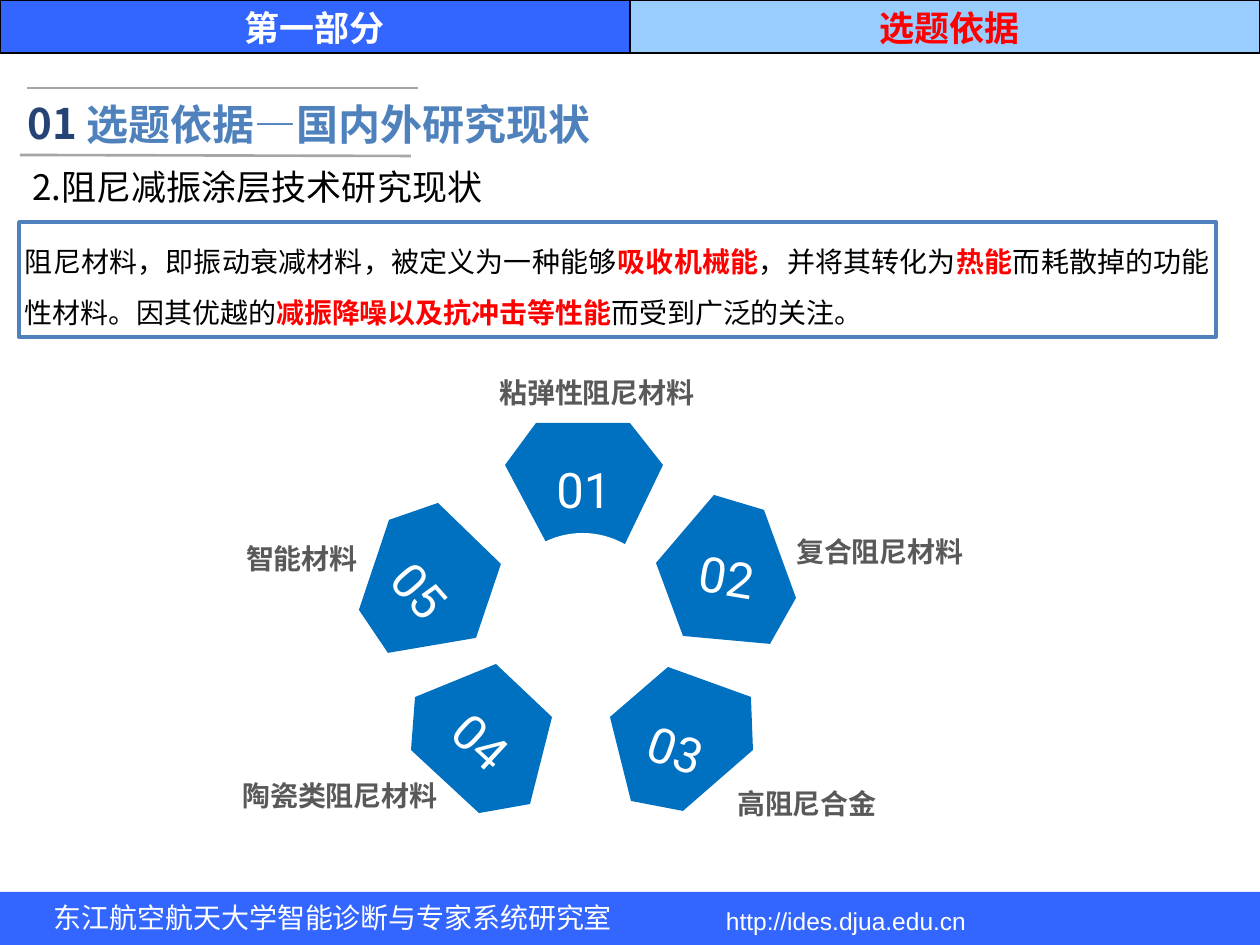
import math

from pptx import Presentation
from pptx import util as u
from pptx.dml.color import RGBColor
from pptx.enum import shapes, text
from pptx.oxml.ns import qn
from lxml import etree

PX = 914400 / 126  # EMU per px
WHITE = RGBColor(0xFF, 0xFF, 0xFF)
BLACK = RGBColor(0, 0, 0)
RED = RGBColor(0xFF, 0, 0)
ROYAL = RGBColor(0x33, 0x66, 0xFF)
SKY = RGBColor(0x99, 0xCC, 0xFF)
NAVY = RGBColor(0x25, 0x43, 0x75)
STEEL = RGBColor(0x4F, 0x81, 0xBD)
PETAL = RGBColor(0x00, 0x70, 0xC0)
GREY = RGBColor(0xA6, 0xA6, 0xA6)
DARK_GREY = RGBColor(0x59, 0x59, 0x59)
CJK = "Noto Sans CJK SC"
LEFT, CENTER = text.PP_ALIGN.LEFT, text.PP_ALIGN.CENTER
TOP, MIDDLE = text.MSO_ANCHOR.TOP, text.MSO_ANCHOR.MIDDLE


def emu(px):
    return u.Emu(round(px * PX))


def turn(point, degrees):
    x, y = point
    c, s = math.cos(math.radians(degrees)), math.sin(math.radians(degrees))
    return x * c - y * s, x * s + y * c


class Deck:
    def __init__(self, width, height):
        self.prs = Presentation()
        self.prs.slide_width, self.prs.slide_height = emu(width), emu(height)
        self.slide = self.prs.slides.add_slide(self.prs.slide_layouts[6])

    def paint(self, shape, fill=None, line=None, weight=1):
        shape.shadow.inherit = False
        if fill is None:
            shape.fill.background()
        else:
            shape.fill.solid()
            shape.fill.fore_color.rgb = fill
        if line is None:
            shape.line.fill.background()
        else:
            shape.line.color.rgb = line
            shape.line.width = u.Pt(weight)
        return shape

    def shape(self, kind, box, **look):
        added = self.slide.shapes.add_shape(kind, *map(emu, box))
        return self.paint(added, **look)

    def rect(self, box, **look):
        return self.shape(shapes.MSO_SHAPE.RECTANGLE, box, **look)

    def line(self, start, end):
        rule = self.slide.shapes.add_connector(
            shapes.MSO_CONNECTOR.STRAIGHT, *map(emu, start + end))
        rule.line.color.rgb = GREY
        rule.line.width = u.Pt(1.5)
        etree.SubElement(rule._element.spPr, qn("a:effectLst"))

    def polygon(self, points, rotation, **look):
        """Outline as seen on the slide, stored upright and then rotated."""
        upright = [turn(p, -rotation) for p in points]
        middle = [(min(axis) + max(axis)) / 2 for axis in zip(*upright)]
        seen = turn(middle, rotation)
        first, *rest = [(round((x - middle[0] + seen[0]) * PX),
                         round((y - middle[1] + seen[1]) * PX)) for x, y in upright]
        builder = self.slide.shapes.build_freeform(*first)
        builder.add_line_segments(rest, close=True)
        outline = self.paint(builder.convert_to_shape(), **look)
        outline.rotation = rotation
        return outline

    def add_text(self, shape, runs, size, font=CJK, align=LEFT, anchor=TOP,
                 spacing=None, inset=None):
        """Runs are (wording, colour, bold)."""
        frame = shape.text_frame
        frame.word_wrap = True
        frame.vertical_anchor = anchor
        if inset is not None:
            frame.margin_left = frame.margin_right = emu(inset)
            frame.margin_top = frame.margin_bottom = emu(inset)
        paragraph = frame.paragraphs[0]
        paragraph.alignment = align
        if spacing:
            paragraph.line_spacing = spacing
        for wording, colour, bold in runs:
            run = paragraph.add_run()
            run.text = wording
            run.font.size, run.font.name = u.Pt(size), font
            run.font.bold, run.font.color.rgb = bold, colour
            east_asian = etree.SubElement(run._r.get_or_add_rPr(), qn("a:ea"))
            east_asian.set("typeface", CJK)

    def label(self, box, wording, size, colour, bold=False, **style):
        added = self.slide.shapes.add_textbox(*map(emu, box))
        self.add_text(added, [(wording, colour, bold)], size, **style)


def main():
    deck = Deck(1260, 945)

    # Header and footer bands
    deck.rect((0, 0, 630, 53), fill=ROYAL, line=BLACK, weight=0.75)
    deck.rect((630, 0, 630, 53), fill=SKY, line=BLACK, weight=0.75)
    deck.rect((0, 892, 1260, 53), fill=ROYAL)
    deck.label((48, 895, 640, 50), "东江航空航天大学智能诊断与专家系统研究室", 16, WHITE, inset=6)
    deck.label((720, 900, 300, 40), "http://ides.djua.edu.cn", 14, WHITE,
               font="Arial", inset=6)
    header = dict(bold=True, font="Arial", align=CENTER, inset=6)
    deck.label((0, 1, 630, 62), "第一部分", 20, WHITE, **header)
    deck.label((640, 0, 620, 55), "选题依据", 20, RED, **header)

    # Section title between two rules
    deck.label((15, 91, 110, 63), "01", 24, NAVY, True)
    deck.label((74, 92, 673, 63), "选题依据—国内外研究现状", 24, STEEL, True)
    deck.line((27, 88), (418, 88))
    deck.line((20, 155), (411, 156))
    subtitle = deck.rect((20, 159, 640, 55), line=WHITE, weight=1.5)
    deck.add_text(subtitle, [("2.阻尼减振涂层技术研究现状", BLACK, False)], 20)

    # Ring of materials: outline, rotation, label, label box
    materials = [
        ([(536, 423), (630, 423), (663, 465), (625, 544), (547, 544), (505, 465)],
         0, "粘弹性阻尼材料", (480, 363, 234, 50)),
        ([(714, 495), (764, 510), (796, 598), (770, 644), (683, 636), (656, 563)],
         9.4, "复合阻尼材料", (780, 522, 200, 50)),
        ([(668, 667), (751, 697), (753, 750), (683, 811), (631, 801), (610, 717)],
         19.2, "高阻尼合金", (724, 774, 166, 50)),
        ([(496, 664), (552, 717), (530, 804), (479, 813), (411, 750), (415, 697)],
         42.7, "陶瓷类阻尼材料", (223, 766, 234, 50)),
        ([(501, 564), (476, 638), (388, 653), (359, 610), (389, 520), (438, 503)],
         48.6, "智能材料", (227, 529, 150, 50)),
    ]
    for number, (points, rotation, _, _) in enumerate(materials, 1):
        petal = deck.polygon(points, rotation, fill=PETAL)
        deck.add_text(petal, [(f"{number:02}", WHITE, False)], 28, font="Roboto",
                      align=CENTER, anchor=MIDDLE, spacing=1.2)
    deck.shape(shapes.MSO_SHAPE.OVAL, (496, 533, 173, 175), fill=WHITE)
    for _, _, name, box in materials:
        deck.label(box, name, 16, DARK_GREY, True, align=CENTER, spacing=1.2)

    # Definition box
    definition = deck.rect((19, 222, 1197, 115), fill=WHITE, line=STEEL, weight=2)
    deck.add_text(definition, [
        ("阻尼材料，即振动衰减材料，被定义为一种能够", BLACK, False),
        ("吸收机械能", RED, True),
        ("，并将其转化为", BLACK, False),
        ("热能", RED, True),
        ("而耗散掉的功能性材料。因其优越的", BLACK, False),
        ("减振降噪以及抗冲击等性能", RED, True),
        ("而受到广泛的关注。", BLACK, False),
    ], 16, align=text.PP_ALIGN.JUSTIFY, spacing=1.5, inset=6)

    deck.prs.save("out.pptx")


if __name__ == "__main__":
    main()
